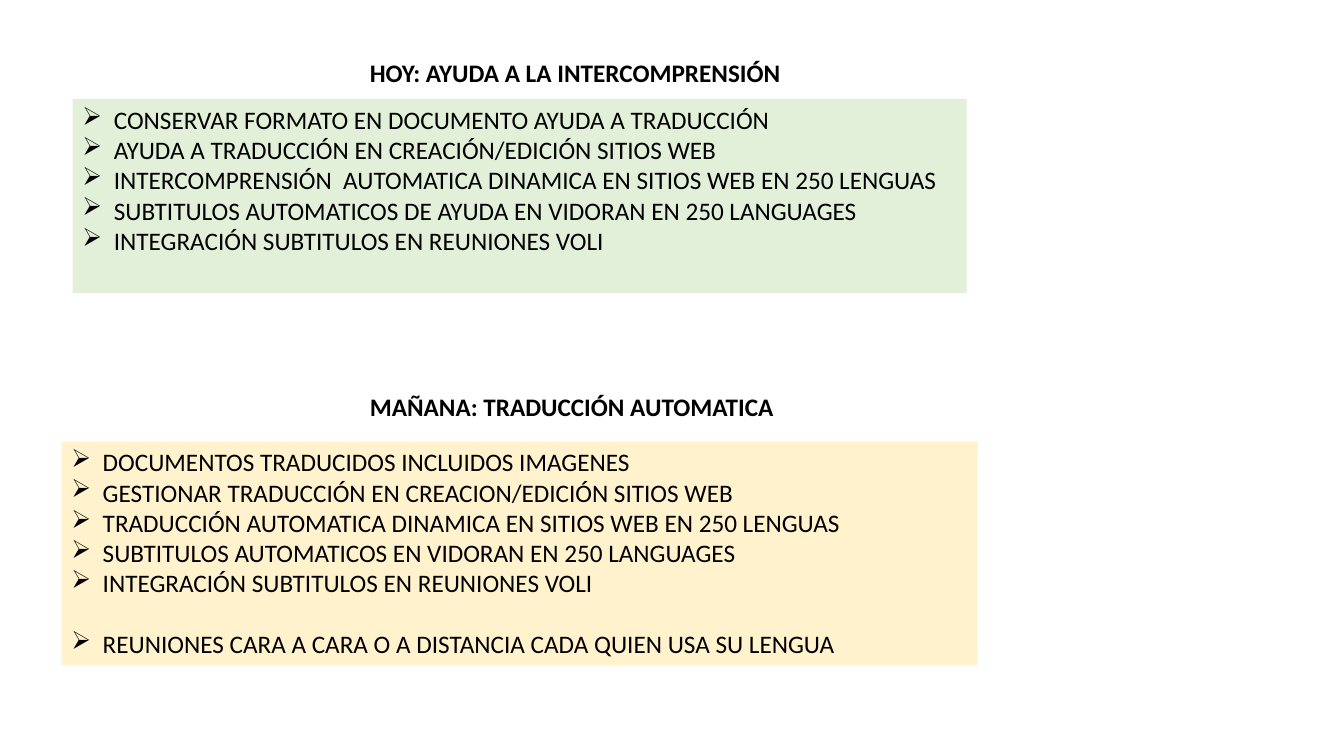
from dataclasses import dataclass

from lxml.etree import SubElement
from pptx import Presentation
from pptx.dml.color import RGBColor as Rgb
from pptx.enum.shapes import MSO_SHAPE as Shape
from pptx.enum.text import MSO_ANCHOR as Anchor, PP_ALIGN as Align
from pptx.oxml.ns import qn
from pptx.util import Cm, Pt


@dataclass(frozen=True)
class Theme:
    font: str = "Calibri"
    size: float = 18
    line_gap: float = 22
    ink: str = "000000"
    today: str = "E2F0D9"
    tomorrow: str = "FFF2CC"
    indent: float = 0.79


class Board:
    """Holds the theme and the current slide."""

    def __init__(self, slide, theme):
        self.slide = slide
        self.theme = theme

    def style(self, paragraph, bold=False):
        paragraph.alignment = Align.LEFT
        for run in paragraph.runs:
            run.font.name = self.theme.font
            run.font.size = Pt(self.theme.size)
            run.font.bold = bold
            run.font.color.rgb = Rgb.from_string(self.theme.ink)

    def heading(self, wording, left, top, width):
        title = self.slide.shapes.add_textbox(Cm(left), Cm(top), Cm(width), Cm(1.03))
        title.text_frame.word_wrap = True
        title.text_frame.text = wording
        self.style(title.text_frame.paragraphs[0], bold=True)

    def bullet(self, paragraph):
        properties = paragraph._p.get_or_add_pPr()
        properties.set("marL", str(Cm(self.theme.indent)))
        properties.set("indent", str(-Cm(self.theme.indent)))
        SubElement(properties, qn("a:buChar"), char="➢")

    def panel(self, points, left, top, width, height, color, apart=None):
        """Bulleted panel; the point numbered apart stands one line lower."""
        panel = self.slide.shapes.add_shape(
            Shape.RECTANGLE, Cm(left), Cm(top), Cm(width), Cm(height))
        panel.shadow.inherit = False
        panel.fill.solid()
        panel.fill.fore_color.rgb = Rgb.from_string(color)
        panel.line.fill.background()
        frame = panel.text_frame
        frame.word_wrap = True
        frame.vertical_anchor = Anchor.TOP
        frame.text = "\n".join(points)
        for number, paragraph in enumerate(frame.paragraphs):
            if number == apart:
                paragraph.space_before = Pt(self.theme.line_gap)
            self.bullet(paragraph)
            self.style(paragraph)


TODAY = [
    "CONSERVAR FORMATO EN DOCUMENTO AYUDA A TRADUCCIÓN",
    "AYUDA A TRADUCCIÓN EN CREACIÓN/EDICIÓN SITIOS WEB",
    "INTERCOMPRENSIÓN  AUTOMATICA DINAMICA EN SITIOS WEB EN 250 LENGUAS",
    "SUBTITULOS AUTOMATICOS DE AYUDA EN VIDORAN EN 250 LANGUAGES",
    "INTEGRACIÓN SUBTITULOS EN REUNIONES VOLI",
]
TOMORROW = [
    "DOCUMENTOS TRADUCIDOS INCLUIDOS IMAGENES",
    "GESTIONAR TRADUCCIÓN EN CREACION/EDICIÓN SITIOS WEB",
    "TRADUCCIÓN AUTOMATICA DINAMICA EN SITIOS WEB EN 250 LENGUAS",
    "SUBTITULOS AUTOMATICOS EN VIDORAN EN 250 LANGUAGES",
    "INTEGRACIÓN SUBTITULOS EN REUNIONES VOLI",
    "REUNIONES CARA A CARA O A DISTANCIA CADA QUIEN USA SU LENGUA",
]


def main():
    deck = Presentation()
    deck.slide_width, deck.slide_height = Cm(33.87), Cm(19.05)
    theme = Theme()
    board = Board(deck.slides.add_slide(deck.slide_layouts[6]), theme)

    # Today
    board.panel(TODAY, 1.83, 2.5, 22.53, 4.88, theme.today)
    board.heading("HOY: AYUDA A LA INTERCOMPRENSIÓN", 9.07, 1.32, 11.4)

    # Tomorrow
    board.heading("MAÑANA: TRADUCCIÓN AUTOMATICA", 9.07, 9.73, 11.07)
    board.panel(TOMORROW, 1.55, 11.13, 23.09, 5.64, theme.tomorrow,
                apart=len(TOMORROW) - 1)

    deck.save("out.pptx")


if __name__ == "__main__":
    main()
